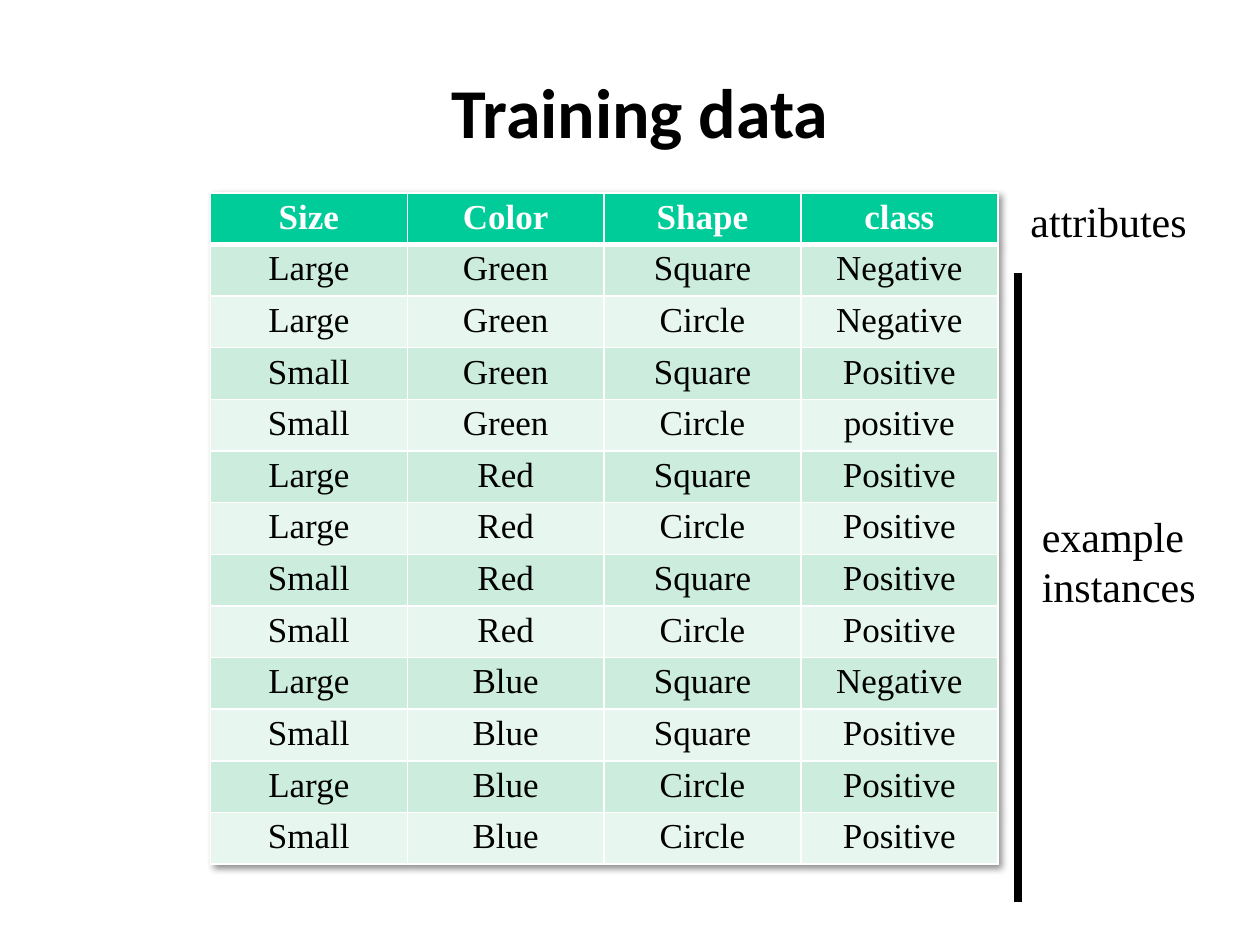
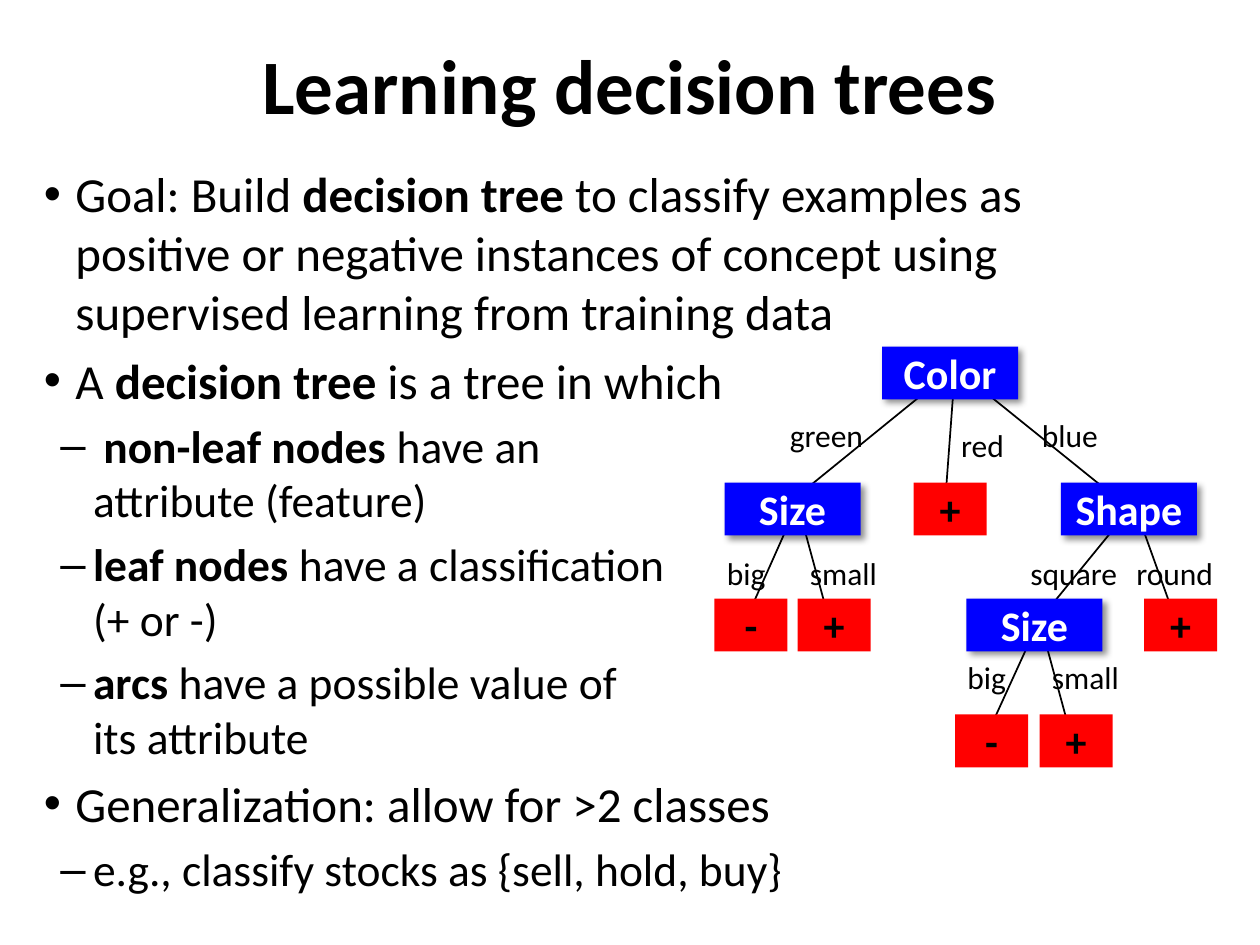
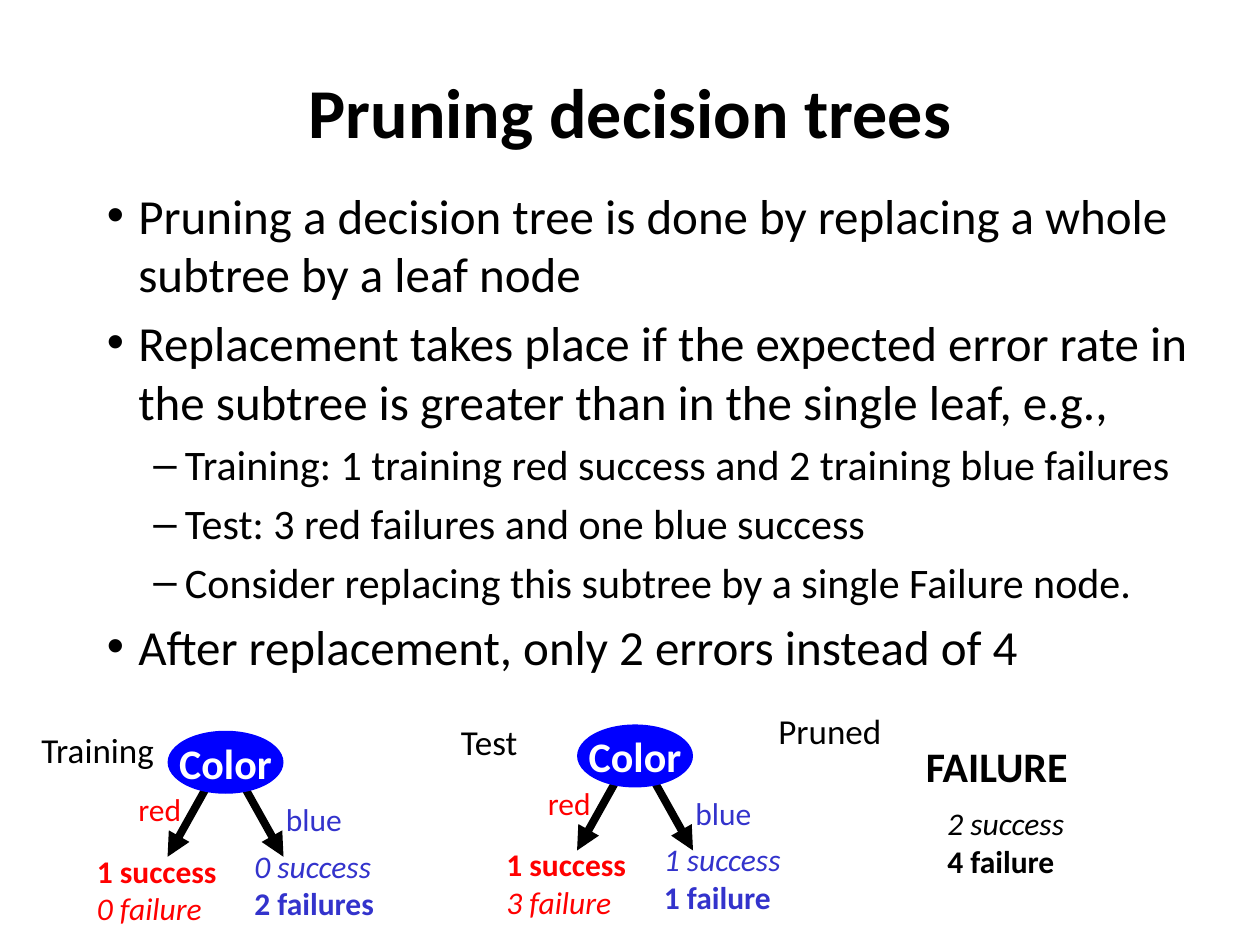
import pptx
import pptx.dml.color
import pptx.enum.shapes
import pptx.enum.text
import pptx.oxml
import pptx.oxml.ns
import pptx.util

# Shared look
BLACK = pptx.dml.color.RGBColor(0x00, 0x00, 0x00)
WHITE = pptx.dml.color.RGBColor(0xFF, 0xFF, 0xFF)
HEADER_GREEN = pptx.dml.color.RGBColor(0x00, 0xCC, 0x99)
BAND_GREENS = (pptx.dml.color.RGBColor(0xCC, 0xEC, 0xDE),
               pptx.dml.color.RGBColor(0xE7, 0xF6, 0xEF))
NODE_BLUE = pptx.dml.color.RGBColor(0x00, 0x00, 0xFF)
TEXT_BLUE = pptx.dml.color.RGBColor(0x33, 0x33, 0xCC)
RED = pptx.dml.color.RGBColor(0xFF, 0x00, 0x00)
SANS, SERIF = "Calibri", "Times New Roman"
CENTER = pptx.enum.text.PP_ALIGN.CENTER
MIDDLE = pptx.enum.text.MSO_ANCHOR.MIDDLE
RECT = pptx.enum.shapes.MSO_SHAPE.RECTANGLE
OVAL = pptx.enum.shapes.MSO_SHAPE.OVAL
NS = pptx.oxml.ns.nsdecls("a")
SHADOW = (f'<a:effectLst {NS}><a:outerShdw blurRad="50800" dist="38100" dir="2700000" '
          'algn="tl" rotWithShape="0"><a:srgbClr val="000000"><a:alpha val="43000"/>'
          '</a:srgbClr></a:outerShdw></a:effectLst>')

# Slide 1: training examples
EXAMPLES = [
    ("Size", "Color", "Shape", "class"),
    ("Large", "Green", "Square", "Negative"),
    ("Large", "Green", "Circle", "Negative"),
    ("Small", "Green", "Square", "Positive"),
    ("Small", "Green", "Circle", "positive"),
    ("Large", "Red", "Square", "Positive"),
    ("Large", "Red", "Circle", "Positive"),
    ("Small", "Red", "Square", "Positive"),
    ("Small", "Red", "Circle", "Positive"),
    ("Large", "Blue", "Square", "Negative"),
    ("Small", "Blue", "Square", "Positive"),
    ("Large", "Blue", "Circle", "Positive"),
    ("Small", "Blue", "Circle", "Positive"),
]
SIDE_NOTES = [(["attributes"], (8.08, 1.5, 1.45, 0.5)),
              (["example", "instances"], (8.17, 4, 1.43, 0.91))]

# Slide 2: (level, paragraph); a paragraph is a string or (text, style) runs
LEARNING = [
    (0, [("Goal: Build ", ""), ("decision tree", "b"),
         (" to classify examples as positive or negative instances of concept "
          "using supervised learning from training data", "")]),
    (0, [("A ", ""), ("decision tree", "b"), (" is a tree in which", "")]),
    (1, [(" ", ""), ("non-leaf nodes ", "b"), ("have an\nattribute (feature)", "")]),
    (1, [("leaf nodes ", "b"), ("have a classification\n(+ or -)", "")]),
    (1, [("arcs", "b"), (" have a possible value of\nits attribute", "")]),
    (0, "Generalization: allow for >2 classes"),
    (1, "e.g., classify stocks as {sell, hold, buy}"),
]
ROW_TOPS = (2.75, 3.83, 4.75, 5.67)
# name: (label, left, row, where the arc enters)
NODES = {
    "color": ("Color", 7, 0, 0.58),
    "shape": ("Shape", 8.42, 1, 0.5),
    "green size": ("Size", 5.75, 1, 0.5),
    "red": ("+", 7.25, 1, 0.25),
    "green small": ("+", 6.33, 2, 0.25),
    "green big": ("-", 5.67, 2, 0.25),
    "square size": ("Size", 7.67, 2, 0.58),
    "square small": ("+", 8.25, 3, 0.25),
    "square big": ("-", 7.58, 3, 0.25),
    "round": ("+", 9.08, 2, 0.25),
}
# (parent, child, value, label box)
ARCS = [
    ("color", "green size", "green", (6.17, 3.25, 0.79, 0.4)),
    ("color", "red", "red", (7.53, 3.33, 0.55, 0.4)),
    ("color", "shape", "blue", (8.17, 3.25, 0.65, 0.4)),
    ("green size", "green big", "big", (5.67, 4.35, 0.52, 0.4)),
    ("green size", "green small", "small", (6.33, 4.35, 0.74, 0.4)),
    ("square size", "square big", "big", (7.58, 5.17, 0.52, 0.4)),
    ("square size", "square small", "small", (8.25, 5.17, 0.74, 0.4)),
    ("shape", "square size", "square", (8.08, 4.35, 0.9, 0.4)),
    ("shape", "round", "round", (8.92, 4.35, 0.82, 0.4)),
]

# Slide 3
PRUNING = [
    (0, "Pruning a decision tree is done by replacing a whole subtree by a leaf node"),
    (0, "Replacement takes place if the expected error rate in the subtree is "
        "greater than in the single leaf, e.g.,"),
    (1, "Training: 1 training red success and 2 training blue failures"),
    (1, "Test: 3 red failures and one blue success"),
    (1, "Consider replacing this subtree by a single Failure node."),
    (0, "After replacement, only 2 errors instead of 4"),
]
# (left, top, red counts, blue counts)
SUBTREES = [
    (1.33, 5.8, [[("1 success", "b")], [("0 failure", "i")]],
     [[("0 success", "i")], [("2 failures", "b")]]),
    (4.58, 5.75, [[("1 success", "b")], [("3 failure", "i")]],
     [[("1 success", "i")], [("1 failure", "b")]]),
]
PRUNED_COUNTS = [[("2 success", "i")], [("4 failure", "b")]]
CAPTIONS = [("Training", (0.23, 5.73, 1.16, 0.43)),
            ("Test", (3.56, 5.67, 0.68, 0.43)),
            ("Pruned", (6.08, 5.58, 1.03, 0.44))]


def inches(values):
    return [pptx.util.Inches(v) for v in values]


def write(p, content, size=18, font=SANS, color=BLACK, bold=False, align=None):
    """Fill one paragraph with a string or with (text, style) runs."""
    p.alignment = align
    for text, style in [(content, "")] if isinstance(content, str) else content:
        for i, line in enumerate(text.split("\n")):
            if i:
                p.add_line_break()
            r = p.add_run()
            r.text = line
            r.font.size = pptx.util.Pt(size)
            r.font.name = font
            r.font.color.rgb = color
            r.font.bold = bold or "b" in style
            r.font.italic = "i" in style


def add_label(shapes, box, paragraphs, **fmt):
    tf = shapes.add_textbox(*inches(box)).text_frame
    tf.word_wrap = False
    for i, content in enumerate(paragraphs):
        write(tf.add_paragraph() if i else tf.paragraphs[0], content, **fmt)


def add_bullets(slide, box, items, sizes, indents):
    """indents holds (left margin, hanging indent) for each level."""
    tf = slide.shapes.add_textbox(*inches(box)).text_frame
    tf.word_wrap = True
    for i, (level, content) in enumerate(items):
        p = tf.add_paragraph() if i else tf.paragraphs[0]
        p.level = level
        p.space_before = pptx.util.Pt(0.2 * sizes[level])
        write(p, content, size=sizes[level])
        margin, hang = inches(indents[level])
        pPr = p._p.get_or_add_pPr()
        pPr.set("marL", str(margin))
        pPr.set("indent", str(-hang))
        pPr.append(pptx.oxml.parse_xml(f'<a:buFont {NS} typeface="Arial"/>'))
        pPr.append(pptx.oxml.parse_xml(f'<a:buChar {NS} char="{"•–"[level]}"/>'))


def add_line(shapes, start, end, width, arrow=False):
    c = shapes.add_connector(pptx.enum.shapes.MSO_CONNECTOR.STRAIGHT,
                             *inches(start + end))
    c.line.color.rgb = BLACK
    c.line.width = pptx.util.Pt(width)
    if arrow:
        c.line._get_or_add_ln().append(
            pptx.oxml.parse_xml(f'<a:tailEnd {NS} type="triangle"/>'))
    c._element.spPr.append(pptx.oxml.parse_xml(f"<a:effectLst {NS}/>"))


def add_node(shapes, kind, box, label, fill, color, shadow=False):
    sp = shapes.add_shape(kind, *inches(box))
    sp.fill.solid()
    sp.fill.fore_color.rgb = fill
    sp.line.fill.background()
    if shadow:
        sp._element.spPr.append(pptx.oxml.parse_xml(SHADOW))
    else:
        sp.shadow.inherit = False
    tf = sp.text_frame
    tf.word_wrap = False
    tf.vertical_anchor = MIDDLE
    write(tf.paragraphs[0], label, size=24, color=color, bold=True, align=CENTER)


def add_slide(prs, title, box, size):
    s = prs.slides.add_slide(prs.slide_layouts[5])
    sp = s.shapes.title
    sp.left, sp.top, sp.width, sp.height = inches(box)
    sp.text_frame.vertical_anchor = MIDDLE
    write(sp.text_frame.paragraphs[0], title, size=size, bold=True, align=CENTER)
    return s


def format_cell(cell, row, text):
    header = row == 0
    tcPr = cell._tc.get_or_add_tcPr()
    widths = {"L": 1, "R": 1, "T": 3 if row == 1 else 1, "B": 3 if header else 1}
    for side, width in widths.items():
        tcPr.append(pptx.oxml.parse_xml(
            f'<a:ln{side} {NS} w="{width * 12700}"><a:solidFill>'
            f'<a:srgbClr val="{WHITE}"/></a:solidFill></a:ln{side}>'))
    cell.fill.solid()
    cell.fill.fore_color.rgb = HEADER_GREEN if header else BAND_GREENS[(row - 1) % 2]
    cell.margin_top = cell.margin_bottom = pptx.util.Inches(0.04)
    write(cell.text_frame.paragraphs[0], text, size=20, font=SERIF, bold=header,
          color=WHITE if header else BLACK, align=CENTER)


def build_training(prs):
    s = add_slide(prs, "Training data", (0.83, 0.25, 8.5, 1.25), 40)
    rows, cols, row_height = len(EXAMPLES), len(EXAMPLES[0]), 0.41
    table = s.shapes.add_table(rows, cols, *inches((1.67, 1.53, 6.25,
                                                    rows * row_height))).table
    table._tbl.tblPr.insert(0, pptx.oxml.parse_xml(SHADOW))
    for i, values in enumerate(EXAMPLES):
        table.rows[i].height = pptx.util.Inches(row_height)
        for j, value in enumerate(values):
            format_cell(table.cell(i, j), i, value)
    for paragraphs, box in SIDE_NOTES:
        add_label(s.shapes, box, paragraphs, size=24, font=SERIF)
    add_line(s.shapes, (8.08, 2.17), (8.08, 7.16), 5)


def build_learning(prs):
    s = add_slide(prs, "Learning decision trees", (0.75, 0.08, 8.5, 1.17), 44)
    add_bullets(s, (0.25, 1.25, 9.08, 6.25), LEARNING, (28, 26),
                ((0.25, 0.25), (0.39, 0.26)))
    tree = s.shapes.add_group_shape().shapes
    # Arcs lie behind the nodes
    for parent, child, _, _ in ARCS:
        _, x1, row1, _ = NODES[parent]
        _, x2, row2, enter = NODES[child]
        add_line(tree, (x1 + 0.58, ROW_TOPS[row1] + 0.17),
                 (x2 + enter, ROW_TOPS[row2] + 0.17), 1)
    for label, left, row, _ in NODES.values():
        leaf = label in "+-"
        add_node(tree, RECT, (left, ROW_TOPS[row], 0.58 if leaf else 1.08, 0.42), label,
                 RED if leaf else NODE_BLUE, BLACK if leaf else WHITE, shadow=not leaf)
    for _, _, value, box in ARCS:
        add_label(tree, box, [value])


def build_pruning(prs):
    s = add_slide(prs, "Pruning decision trees", (0.75, 0.25, 8.5, 1.25), 40)
    add_bullets(s, (0.75, 1.42, 8.83, 4.25), PRUNING, (28, 24),
                ((0.25, 0.25), (0.62, 0.25)))
    for x, y, red_counts, blue_counts in SUBTREES:
        tree = s.shapes.add_group_shape().shapes
        for start, end in ((0.42, 0), (0.5, 0.92)):
            add_line(tree, (x + start, y + 0.25), (x + end, y + 1), 4.5, arrow=True)
        add_node(tree, OVAL, (x, y, 0.92, 0.5), "Color", NODE_BLUE, WHITE)
        add_label(tree, (x - 0.66, y + 0.91, 1.18, 0.71), red_counts, color=RED)
        add_label(tree, (x + 0.59, y + 0.87, 1.2, 0.71), blue_counts, color=TEXT_BLUE)
        add_label(tree, (x - 0.33, y + 0.42, 0.55, 0.4), ["red"], color=RED)
        add_label(tree, (x + 0.84, y + 0.5, 0.65, 0.4), ["blue"], color=TEXT_BLUE)
    add_label(s.shapes, (7.42, 6.33, 1.2, 0.71), PRUNED_COUNTS)
    add_label(s.shapes, (7.25, 5.83, 1.37, 0.5), ["FAILURE"], size=24, bold=True)
    for caption, box in CAPTIONS:
        add_label(s.shapes, box, [caption], size=20)


def main():
    prs = pptx.Presentation()
    prs.slide_width, prs.slide_height = inches((10, 7.5))
    build_training(prs)
    build_learning(prs)
    build_pruning(prs)
    prs.save("out.pptx")


if __name__ == "__main__":
    main()
